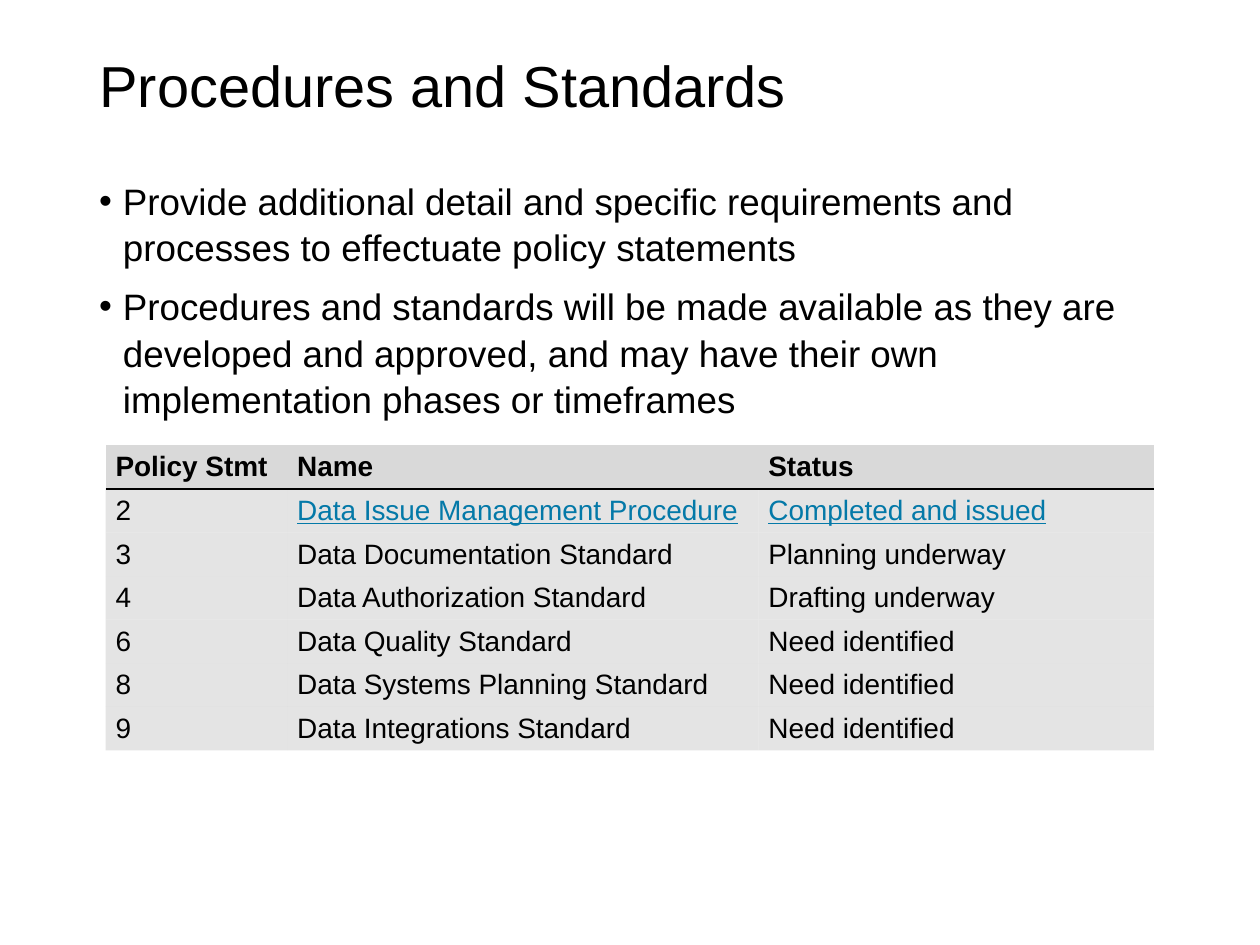
from lxml.etree import SubElement
from pptx import Presentation
from pptx.dml.color import RGBColor
from pptx.enum.text import MSO_ANCHOR, PP_ALIGN
from pptx.oxml.ns import qn
from pptx.util import Cm, Pt

FONT = "Arial"
COLORS = {"text": "000000", "link": "0479A8", "fill": "D9D9D9", "rule": "000000"}
BULLETS = [
    "Provide additional detail and specific requirements and processes "
    "to effectuate policy statements",
    "Procedures and standards will be made available as they are developed "
    "and approved, and may have their own implementation phases or timeframes",
]
STANDARDS = [
    ("Policy Stmt", "Name", "Status"),
    ("2", "Data Issue Management Procedure", "Completed and issued"),
    ("3", "Data Documentation Standard", "Planning underway"),
    ("4", "Data Authorization Standard", "Drafting underway"),
    ("6", "Data Quality Standard", "Need identified"),
    ("8", "Data Systems Planning Standard", "Need identified"),
    ("9", "Data Integrations Standard", "Need identified"),
]
COLUMN_WIDTHS = [3.66, 9.5, 7.97]
ROW_HEIGHT = 0.84


def add_run(paragraph, text, size, color="text", bold=False, underline=False):
    run = paragraph.add_run()
    run.text = text
    run.font.name = FONT
    run.font.size = Pt(size)
    run.font.bold = bold
    run.font.underline = underline
    run.font.color.rgb = RGBColor.from_string(COLORS[color])


def place_title(slide, left, top, width, height):
    title = slide.shapes.title
    title.left, title.top = Cm(left), Cm(top)
    title.width, title.height = Cm(width), Cm(height)
    title.text_frame.vertical_anchor = MSO_ANCHOR.MIDDLE
    paragraph = title.text_frame.paragraphs[0]
    paragraph.alignment = PP_ALIGN.LEFT
    paragraph.line_spacing = 0.9
    add_run(paragraph, "Procedures and Standards", 33)


def add_bullets(slide, left, top, width, height):
    box = slide.shapes.add_textbox(Cm(left), Cm(top), Cm(width), Cm(height))
    frame = box.text_frame
    frame.word_wrap = True
    for index, text in enumerate(BULLETS):
        paragraph = frame.add_paragraph() if index else frame.paragraphs[0]
        properties = paragraph._p.get_or_add_pPr()
        properties.set("marL", str(Cm(0.48)))
        properties.set("indent", str(-Cm(0.48)))
        SubElement(properties, qn("a:buFont"), typeface=FONT)
        SubElement(properties, qn("a:buChar"), char="•")
        paragraph.line_spacing = 1.05
        if index:
            paragraph.space_before = Pt(7.5)
        add_run(paragraph, text, 21)


def set_borders(cell, ruled_side):
    properties = cell._tc.get_or_add_tcPr()
    for side in ("L", "R", "T", "B"):
        ruled = side == ruled_side
        line = SubElement(properties, qn(f"a:ln{side}"), w=str(Pt(1 if ruled else 0)))
        if ruled:
            fill = SubElement(line, qn("a:solidFill"))
            SubElement(fill, qn("a:srgbClr"), val=COLORS["rule"])
        else:
            SubElement(line, qn("a:noFill"))


def fill_cell(cell, opacity):
    cell.fill.solid()
    cell.fill.fore_color.rgb = RGBColor.from_string(COLORS["fill"])
    if opacity < 100:
        color = cell._tc.tcPr.find(f"{qn('a:solidFill')}/{qn('a:srgbClr')}")
        SubElement(color, qn("a:alpha"), val=str(opacity * 1000))


def add_standards_table(slide, left, top):
    frame = slide.shapes.add_table(
        len(STANDARDS), len(COLUMN_WIDTHS), Cm(left), Cm(top),
        Cm(sum(COLUMN_WIDTHS)), Cm(ROW_HEIGHT * len(STANDARDS)))
    table = frame.table
    table.first_row = table.horz_banding = False
    for column, width in zip(table.columns, COLUMN_WIDTHS):
        column.width = Cm(width)
    for row_index, values in enumerate(STANDARDS):
        table.rows[row_index].height = Cm(ROW_HEIGHT)
        header = row_index == 0
        for column_index, text in enumerate(values):
            cell = table.cell(row_index, column_index)
            cell.margin_left = cell.margin_right = Cm(0.2)
            cell.margin_top = cell.margin_bottom = Cm(0.1)
            cell.vertical_anchor = MSO_ANCHOR.MIDDLE
            set_borders(cell, {0: "B", 1: "T"}.get(row_index))
            fill_cell(cell, 100 if header else 70)
            linked = row_index == 1 and column_index > 0
            add_run(cell.text_frame.paragraphs[0], text, 16,
                    "link" if linked else "text", header, linked)


def main():
    presentation = Presentation()
    presentation.slide_width, presentation.slide_height = Cm(25.4), Cm(19.05)
    slide = presentation.slides.add_slide(presentation.slide_layouts[5])
    place_title(slide, 1.75, 0.89, 21.9, 1.78)
    add_bullets(slide, 1.75, 3.43, 21.9, 14.02)
    add_standards_table(slide, 2.13, 8.98)
    presentation.save("out.pptx")


if __name__ == "__main__":
    main()
